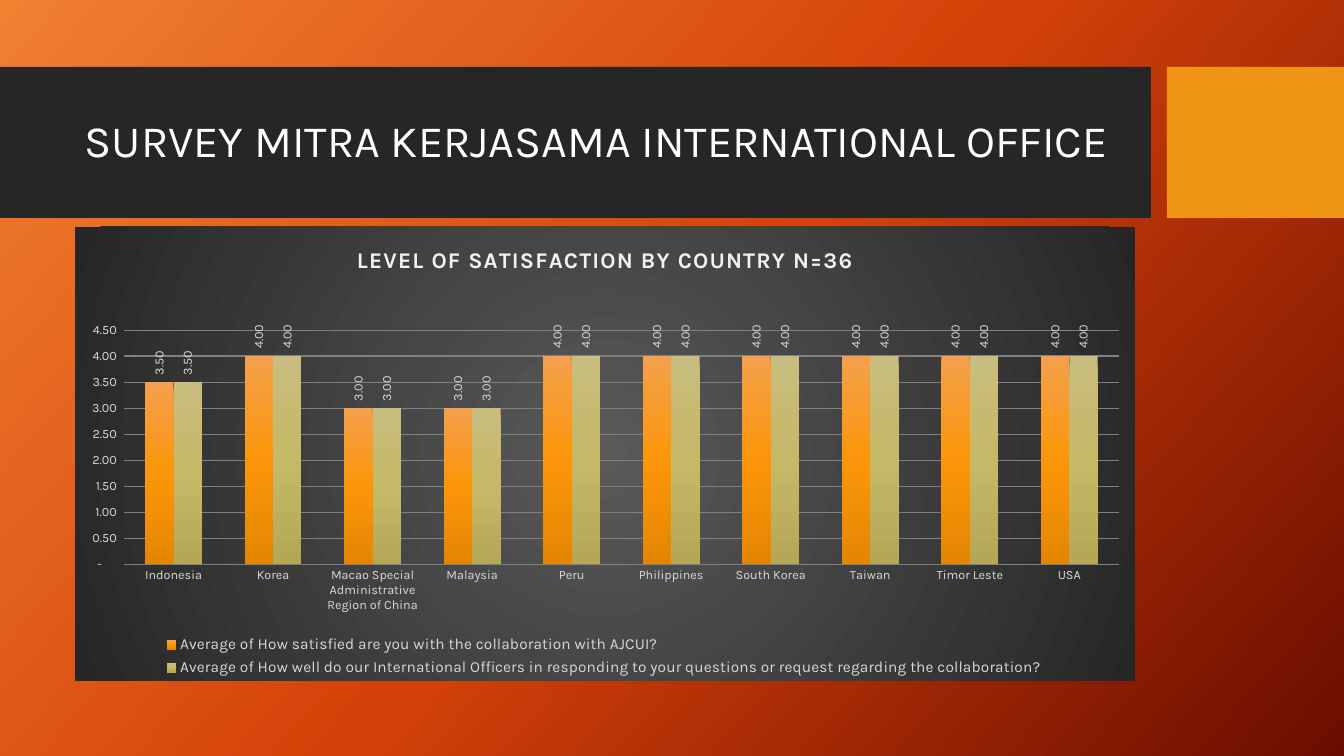
"""Build the partner survey slide with its satisfaction chart."""
from pptx import Presentation
from pptx.chart.data import CategoryChartData as Data
from pptx.dml.color import RGBColor as RGB
from pptx.enum.chart import XL_CHART_TYPE as Kind, XL_LABEL_POSITION as Spot
from pptx.enum.chart import XL_LEGEND_POSITION as Side, XL_TICK_MARK as Tick
from pptx.enum.shapes import MSO_SHAPE as Form
from pptx.enum.text import MSO_ANCHOR as Anchor
from pptx.oxml import parse_xml
from pptx.oxml.ns import nsdecls, qn
from pptx.util import Pt

HEX = {"band": "262626", "accent": "F09415", "white": "FFFFFF",
       "title": "F2F2F2", "label": "D9D9D9", "grid": "808080"}
GRAD = {"back": ["F18031", "D54209", "6A0D00"], "panel": ["595959", "262626"],
        "bars": [["F4A04D", "FB960A", "E58603"],
                 ["C8BD7E", "C5B867", "B4A756"]]}
SCALE = 12192000 / 1344
FONT = "Karla"
NUM = r'_(* #,##0.00_);_(* \(#,##0.00\);_(* "-"??_);_(@_)'
LINEAR = '<a:lin ang="{}" scaled="0"/>'
ROUND = ('<a:path path="circle"><a:fillToRect l="50000" t="50000" '
         'r="50000" b="50000"/></a:path>')
LANDS = ["Indonesia", "Korea", "Macao Special Administrative Region of China",
         "Malaysia", "Peru", "Philippines", "South Korea", "Taiwan",
         "Timor Leste", "USA"]
SCORES = [3.5, 4, 3, 3, 4, 4, 4, 4, 4, 4]
ASKED = ["Average of How satisfied are you with the collaboration with AJCUI?",
         "Average of How well do our International Officers in responding to "
         "your questions or request regarding the collaboration?"]


def px(*sizes):
    """Turn pixel lengths into EMU."""
    return [round(size * SCALE) for size in sizes]


def apply(item, **values):
    """Set each named value on an item."""
    for name, value in values.items():
        setattr(item, name, value)


def blend(tones, course):
    """Make a gradient fill with evenly spaced stops."""
    step = 100000 // (len(tones) - 1)
    stops = "".join(f'<a:gs pos="{i * step}"><a:srgbClr val="{tone}"/></a:gs>'
                    for i, tone in enumerate(tones))
    return parse_xml(f'<a:gradFill {nsdecls("a")} rotWithShape="1">'
                     f'<a:gsLst>{stops}</a:gsLst>{course}</a:gradFill>')


def shade(fill, owner, tones, angle):
    """Replace a plain fill by a linear gradient."""
    fill.solid()
    plain = next(owner.iter(qn("a:solidFill")))
    plain.getparent().replace(plain, blend(tones, LINEAR.format(angle * 60000)))


class Deck:
    """Hold the style and the current slide."""

    def __init__(self):
        self.show = Presentation()
        apply(self.show, slide_width=px(1344)[0], slide_height=px(756)[0])
        self.slide = self.show.slides.add_slide(self.show.slide_layouts[6])
        back = self.slide.background.fill
        shade(back, self.slide.element, GRAD["back"], 42)

    def style(self, font, size, color, bold=False):
        """Set the face, size and colour of a font."""
        apply(font, name=FONT, size=Pt(size), bold=bold)
        font.color.rgb = RGB.from_string(HEX[color])

    def block(self, box, color):
        """Add a plain rectangle."""
        shape = self.slide.shapes.add_shape(Form.RECTANGLE, *px(*box))
        shape.shadow.inherit = False
        shape.fill.solid()
        shape.fill.fore_color.rgb = RGB.from_string(HEX[color])
        shape.line.fill.background()

    def head(self, box, text):
        """Add the slide heading."""
        frame = self.slide.shapes.add_textbox(*px(*box)).text_frame
        apply(frame, word_wrap=True, vertical_anchor=Anchor.MIDDLE)
        para = frame.paragraphs[0]
        apply(para, text=text, line_spacing=0.9)
        self.style(para.runs[0].font, 32, "white")

    def chart(self, box, title):
        """Add the column chart."""
        data = Data(number_format=NUM)
        data.categories = LANDS
        for name in ASKED:
            data.add_series(name, SCORES)
        chart = self.slide.shapes.add_chart(
            Kind.COLUMN_CLUSTERED, *px(*box), data).chart
        self.style(chart.font, 10, "white")
        self.panel(chart)
        self.title(chart, title)
        self.axes(chart)
        self.bars(chart.plots[0])
        chart.has_legend = True
        apply(chart.legend, position=Side.BOTTOM, include_in_layout=False)
        self.style(chart.legend.font, 11, "label")

    def panel(self, chart):
        """Fill the chart area and place the plot."""
        root = chart.element
        area = parse_xml(f'<c:spPr {nsdecls("c", "a")}>'
                         '<a:ln><a:noFill/></a:ln></c:spPr>')
        area.insert(0, blend(GRAD["panel"], ROUND))
        root.find(qn("c:txPr")).addprevious(area)
        plot = next(root.iter(qn("c:plotArea")))
        for old in plot.findall(qn("c:layout")):
            plot.remove(old)
        place = {"x": 0.046, "y": 0.227, "w": 0.939, "h": 0.516}
        modes = "".join(f'<c:{k}Mode val="edge"/>' for k in "xy")
        sizes = "".join(f'<c:{k} val="{v}"/>' for k, v in place.items())
        plot.insert(0, parse_xml(
            f'<c:layout {nsdecls("c")}><c:manualLayout>'
            f'<c:layoutTarget val="inner"/>{modes}{sizes}'
            '</c:manualLayout></c:layout>'))

    def title(self, chart, text):
        """Add the spaced chart title."""
        chart.has_title = True
        chart.chart_title.include_in_layout = False
        para = chart.chart_title.text_frame.paragraphs[0]
        para.text = text
        self.style(para.runs[0].font, 16, "title", True)
        next(para.runs[0].font._element.iterancestors(qn("a:r"))) \
            .find(qn("a:rPr")).set("spc", "100")

    def axes(self, chart):
        """Style both axes and the grid."""
        for axis in (chart.category_axis, chart.value_axis):
            apply(axis, major_tick_mark=Tick.NONE, minor_tick_mark=Tick.NONE)
            axis.format.line.fill.background()
            self.style(axis.tick_labels.font, 9, "label")
        apply(axis, minimum_scale=0, maximum_scale=4.5, major_unit=0.5,
              has_major_gridlines=True)
        apply(axis.tick_labels, number_format=NUM, number_format_is_linked=False)
        line = axis.major_gridlines.format.line
        line.width = Pt(0.75)
        line.color.rgb = RGB.from_string(HEX["grid"])

    def bars(self, plot):
        """Colour the columns and turn their labels."""
        apply(plot, gap_width=150, overlap=0, vary_by_categories=False)
        for row, tones in zip(plot.series, GRAD["bars"]):
            shade(row.format.fill, row._element, tones, 90)
            labels = row.data_labels
            apply(labels, show_value=True, position=Spot.OUTSIDE_END,
                  number_format=NUM, number_format_is_linked=False)
            self.style(labels.font, 9, "label")
            body = next(row._element.iter(qn("a:bodyPr")))
            body.set("rot", "-5400000")
            body.set("vert", "horz")


def main():
    """Build and save the slide."""
    deck = Deck()
    deck.block((0, 67, 1151, 151), "band")
    deck.block((1167, 67, 177, 151), "accent")
    deck.head((75, 83, 1060, 119), "SURVEY MITRA KERJASAMA INTERNATIONAL OFFICE")
    deck.chart((75, 227, 1060, 454), "LEVEL OF SATISFACTION BY COUNTRY N=36")
    deck.show.save("out.pptx")


if __name__ == "__main__":
    main()
